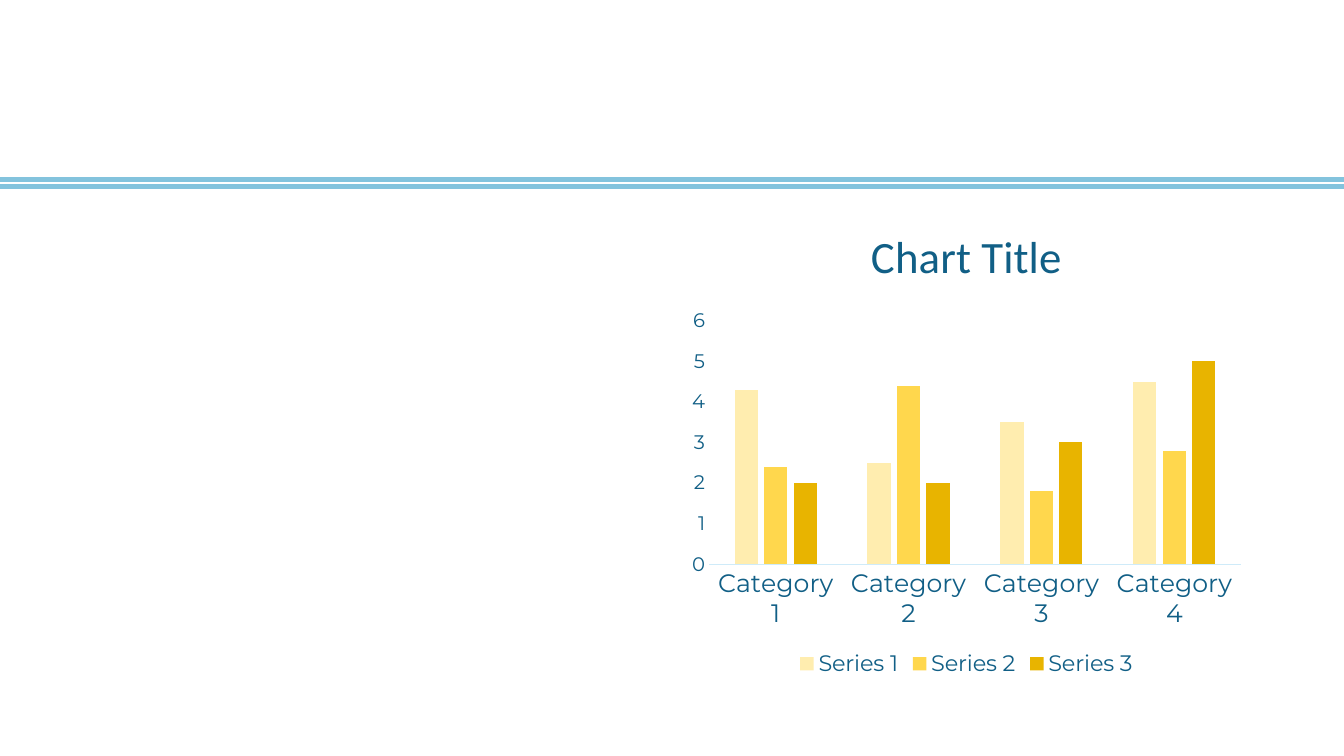
from lxml.etree import SubElement
from pptx import Presentation
from pptx.chart.data import CategoryChartData as ChartData
from pptx.dml.color import RGBColor as RGB
from pptx.enum.chart import XL_CHART_TYPE as ChartType
from pptx.enum.chart import XL_LEGEND_POSITION as LegendPos
from pptx.enum.chart import XL_TICK_MARK as Tick
from pptx.enum.shapes import MSO_CONNECTOR as Connector
from pptx.oxml.ns import qn
from pptx.util import Inches, Pt

COLORS = {"text": "115F86", "rule": "83C3DD", "axis": "CFEBF9",
          "Series 1": "FFEDAF", "Series 2": "FFD74D", "Series 3": "E8B400"}
SERIES = {"Series 1": (4.3, 2.5, 3.5, 4.5),
          "Series 2": (2.4, 4.4, 1.8, 2.8),
          "Series 3": (2, 2, 3, 5)}
CATEGORIES = [f"Category {n}" for n in range(1, 5)]
WIDTH, HEIGHT = 13.33, 7.5


def color(name):
    return RGB.from_string(COLORS[name])


def style_font(font, size, name="Montserrat"):
    font.size, font.name, font.bold = Pt(size), name, False
    font.color.rgb = color("text")


def write(tf, text, **fmt):
    p = tf.paragraphs[0]
    r = p.add_run()
    r.text = text
    style_font(r.font, **fmt)


class Deck:
    """Draws styled elements on one slide, placed by shares of its size."""

    def __init__(self):
        self.prs = Presentation()
        self.prs.slide_width, self.prs.slide_height = Inches(WIDTH), Inches(HEIGHT)
        self.s = self.prs.slides.add_slide(self.prs.slide_layouts[6])

    def x(self, share):
        return int(self.prs.slide_width * share)

    def y(self, share):
        return int(self.prs.slide_height * share)

    def rule(self, top):
        line = self.s.shapes.add_connector(
            Connector.STRAIGHT, 0, self.y(top), self.x(1), self.y(top))
        line.line.color.rgb = color("rule")
        line.line.width = Pt(3)
        SubElement(line._element.spPr, qn("a:effectLst"))

    def column_chart(self, left, top, width, height, title):
        data = ChartData()
        data.categories = CATEGORIES
        for name, values in SERIES.items():
            data.add_series(name, values)
        chart = self.s.shapes.add_chart(
            ChartType.COLUMN_CLUSTERED, self.x(left), self.y(top),
            self.x(width), self.y(height), data).chart
        style_font(chart.font, 10, "Calibri")

        chart.has_title = True
        write(chart.chart_title.text_frame, title, size=32, name="Calibri")

        chart.has_legend = True
        chart.legend.position = LegendPos.BOTTOM
        chart.legend.include_in_layout = False
        style_font(chart.legend.font, 16)

        plot = chart.plots[0]
        plot.gap_width, plot.overlap, plot.vary_by_categories = 219, -27, False
        for series in plot.series:
            series.format.fill.solid()
            series.format.fill.fore_color.rgb = color(series.name)

        for axis, size in ((chart.category_axis, 18), (chart.value_axis, 14)):
            axis.has_major_gridlines = False
            axis.major_tick_mark = axis.minor_tick_mark = Tick.NONE
            style_font(axis.tick_labels.font, size)
        chart.category_axis.format.line.color.rgb = color("axis")
        chart.category_axis.format.line.width = Pt(0.75)
        chart.value_axis.format.line.fill.background()


def main():
    deck = Deck()
    for top in (1.85, 1.78):
        deck.rule(top / HEIGHT)
    deck.column_chart(6.75 / WIDTH, 2 / HEIGHT, 5.67 / WIDTH, 4.76 / HEIGHT,
                      "Chart Title")
    deck.prs.save("out.pptx")


if __name__ == "__main__":
    main()
